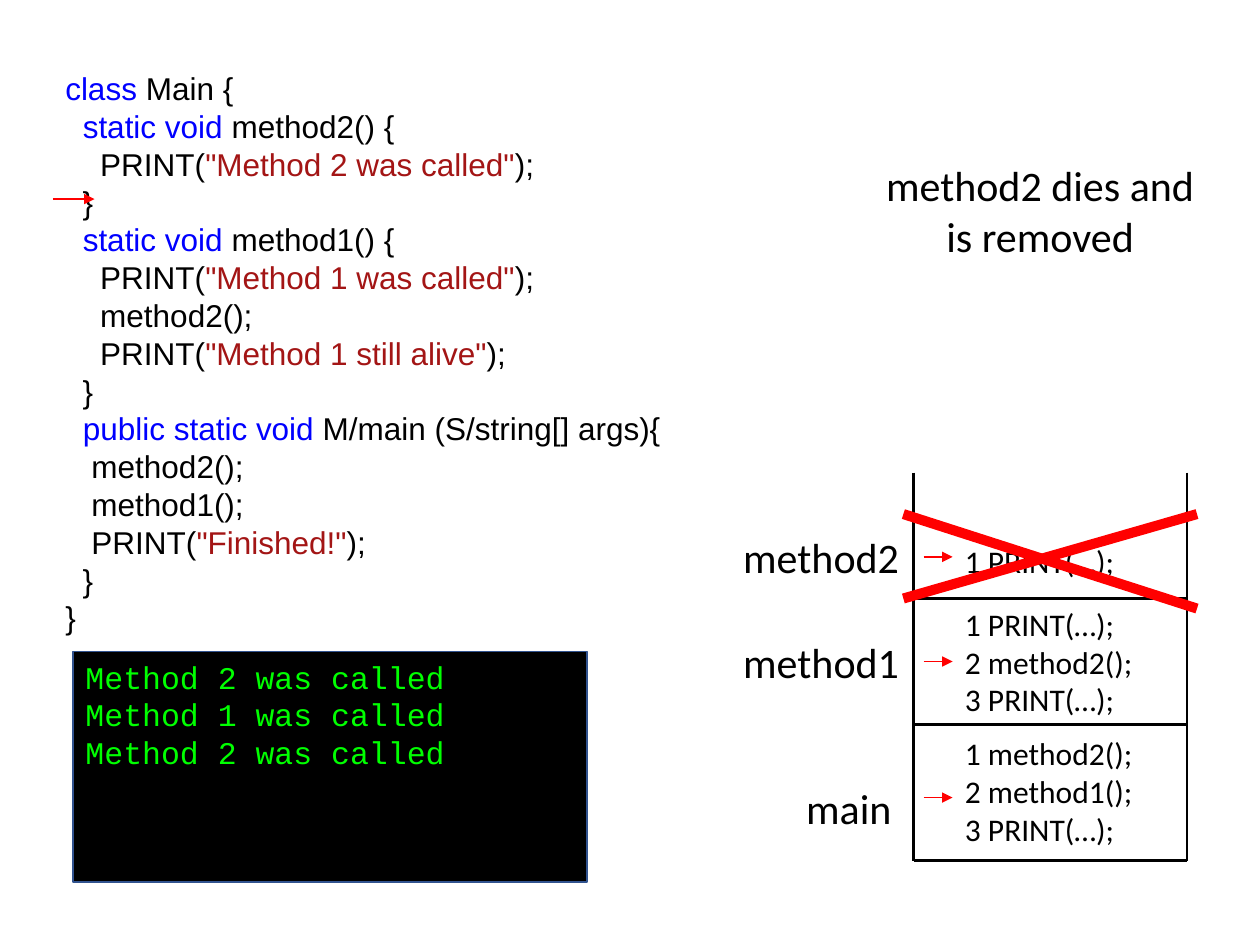
from dataclasses import dataclass
from typing import NamedTuple

from lxml.etree import SubElement
from pptx import Presentation
from pptx.dml.color import RGBColor
from pptx.enum.shapes import MSO_CONNECTOR, MSO_SHAPE
from pptx.enum.text import MSO_ANCHOR, MSO_AUTO_SIZE, PP_ALIGN
from pptx.oxml.ns import qn
from pptx.shapes.base import BaseShape
from pptx.slide import Slide
from pptx.text.text import TextFrame
from pptx.util import Inches, Pt


@dataclass(frozen=True)
class Theme:
    """Colours, fonts and type sizes of the slide."""

    text: str = "000000"
    keyword: str = "0000FF"
    string: str = "A31515"
    accent: str = "FF0000"
    console_text: str = "00FF00"
    console_fill: str = "000000"
    console_line: str = "31538F"
    code_font: str = "Arial"
    label_font: str = "Calibri"
    console_font: str = "Courier New"
    body_size: int = 18
    label_size: int = 24


class Box(NamedTuple):
    """Left, top, width and height in inches."""

    left: float
    top: float
    width: float
    height: float


class Span(NamedTuple):
    """A piece of text in one colour."""

    text: str
    colour: str


class Frame(NamedTuple):
    """One method call on the stack."""

    name: str
    name_box: Box
    steps: tuple[str, ...]
    steps_box: Box
    arrow_y: float
    bottom: float


THEME = Theme()
STACK_LEFT, STACK_RIGHT, STACK_TOP, STACK_BOTTOM = 7.25, 9.42, 3.75, 6.83
KEYWORDS = ("public static void", "static void", "class")
CODE = """class Main {
  static void method2() {
    PRINT("Method 2 was called");
  }
  static void method1() {
    PRINT("Method 1 was called");
    method2();
    PRINT("Method 1 still alive");
  }
  public static void M/main (S/string[] args){
   method2();
   method1();
   PRINT("Finished!");
  }
}"""
OUTPUT = ("Method 2 was called", "Method 1 was called", "Method 2 was called")
FRAMES = (
    Frame("main", Box(6.3, 6.16, 0.89, 0.5), ("1 method2();", "2 method1();", "3 PRINT(…);"),
          Box(7.56, 5.78, 1.55, 1.01), 6.33, STACK_BOTTOM),
    Frame("method1", Box(5.8, 5, 1.45, 0.5), ("1 PRINT(…);", "2 method2();", "3 PRINT(…);"),
          Box(7.56, 4.75, 1.55, 1.01), 5.25, 5.75),
    Frame("method2", Box(5.8, 4.17, 1.45, 0.5), ("1 PRINT(…);",),
          Box(7.56, 4.25, 1.86, 0.4), 4.42, 4.75),
)


def highlight(line: str) -> list[Span]:
    """Split a line of code into coloured spans."""
    token, colour = next((word for word in KEYWORDS if word in line), ""), THEME.keyword
    if '"' in line:
        token, colour = line[line.index('"'):line.rindex('"') + 1], THEME.string
    if not token:
        return [Span(line, THEME.text)]
    before, token, after = line.partition(token)
    spans = [Span(before, THEME.text), Span(token, colour), Span(after, THEME.text)]
    return [span for span in spans if span.text]


def write_text(text_frame: TextFrame, lines: list[list[Span]], *, font: str, size: int,
               alignment: PP_ALIGN = PP_ALIGN.LEFT) -> None:
    """Fill a text frame with one paragraph per line of spans."""
    text_frame.word_wrap = True
    text_frame.vertical_anchor = MSO_ANCHOR.TOP
    for index, spans in enumerate(lines):
        paragraph = text_frame.add_paragraph() if index else text_frame.paragraphs[0]
        paragraph.alignment = alignment
        for span in spans:
            for part_index, part in enumerate(span.text.split("\n")):
                if part_index:
                    paragraph.add_line_break()
                run = paragraph.add_run()
                run.text = part
                run.font.name = font
                run.font.size = Pt(size)
                run.font.color.rgb = RGBColor.from_string(span.colour)


def plain(*texts: str, colour: str = THEME.text) -> list[list[Span]]:
    """Turn texts into lines of a single colour."""
    return [[Span(text, colour)] for text in texts]


def add_text(slide: Slide, box: Box, lines: list[list[Span]], *,
             font: str = THEME.label_font, size: int = THEME.label_size,
             alignment: PP_ALIGN = PP_ALIGN.LEFT) -> None:
    """Add a text box that grows with its text."""
    shape = slide.shapes.add_textbox(*map(Inches, box))
    write_text(shape.text_frame, lines, font=font, size=size, alignment=alignment)
    shape.text_frame.auto_size = MSO_AUTO_SIZE.SHAPE_TO_FIT_TEXT


def add_line(slide: Slide, start: tuple[float, float], end: tuple[float, float], *,
             colour: str = THEME.text, width: float = 1.5, arrow: bool = False) -> None:
    """Add a straight line, with an arrowhead at its end if asked."""
    connector = slide.shapes.add_connector(MSO_CONNECTOR.STRAIGHT, *map(Inches, start + end))
    connector.line.color.rgb = RGBColor.from_string(colour)
    connector.line.width = Pt(width)
    if arrow:
        SubElement(connector.line._get_or_add_ln(), qn("a:tailEnd"), type="triangle")
    SubElement(connector._element.spPr, qn("a:effectLst"))


def add_console(slide: Slide, box: Box) -> BaseShape:
    """Add the console window with the printed output."""
    console = slide.shapes.add_shape(MSO_SHAPE.RECTANGLE, *map(Inches, box))
    console.shadow.inherit = False
    console.fill.solid()
    console.fill.fore_color.rgb = RGBColor.from_string(THEME.console_fill)
    console.line.color.rgb = RGBColor.from_string(THEME.console_line)
    console.line.width = Pt(1)
    write_text(console.text_frame, plain(*OUTPUT, colour=THEME.console_text),
               font=THEME.console_font, size=THEME.body_size)
    return console


def add_frame(slide: Slide, frame: Frame) -> None:
    """Add a stack frame: floor, name, steps and current-step arrow."""
    add_line(slide, (STACK_LEFT, frame.bottom), (STACK_RIGHT, frame.bottom))
    add_text(slide, frame.name_box, plain(frame.name))
    add_text(slide, frame.steps_box, plain(*frame.steps), size=THEME.body_size)
    add_line(slide, (7.33, frame.arrow_y), (7.56, frame.arrow_y),
             colour=THEME.accent, width=0.75, arrow=True)


def main() -> None:
    """Build the call stack slide and save it."""
    presentation = Presentation()
    presentation.slide_width, presentation.slide_height = Inches(10), Inches(7.5)
    slide = presentation.slides.add_slide(presentation.slide_layouts.get_by_name("Blank"))

    add_text(slide, Box(0.42, 0.5, 7.67, 4.64), [highlight(line) for line in CODE.splitlines()],
             font=THEME.code_font, size=THEME.body_size)
    add_line(slide, (0.42, 1.58), (0.75, 1.58), colour=THEME.accent, width=1.25, arrow=True)
    add_console(slide, Box(0.58, 5.17, 4.08, 1.83))
    add_text(slide, Box(6.92, 1.22, 2.67, 0.91), plain("method2 dies and\nis removed"),
             alignment=PP_ALIGN.CENTER)

    for side in (STACK_LEFT, STACK_RIGHT):
        add_line(slide, (side, STACK_TOP), (side, STACK_BOTTOM))
    for frame in FRAMES:
        add_frame(slide, frame)
    for start_y, end_y in ((4.08, 4.83), (4.75, 4.08)):
        add_line(slide, (7.17, start_y), (9.5, end_y), colour=THEME.accent, width=5.75)

    presentation.save("out.pptx")


if __name__ == "__main__":
    main()
